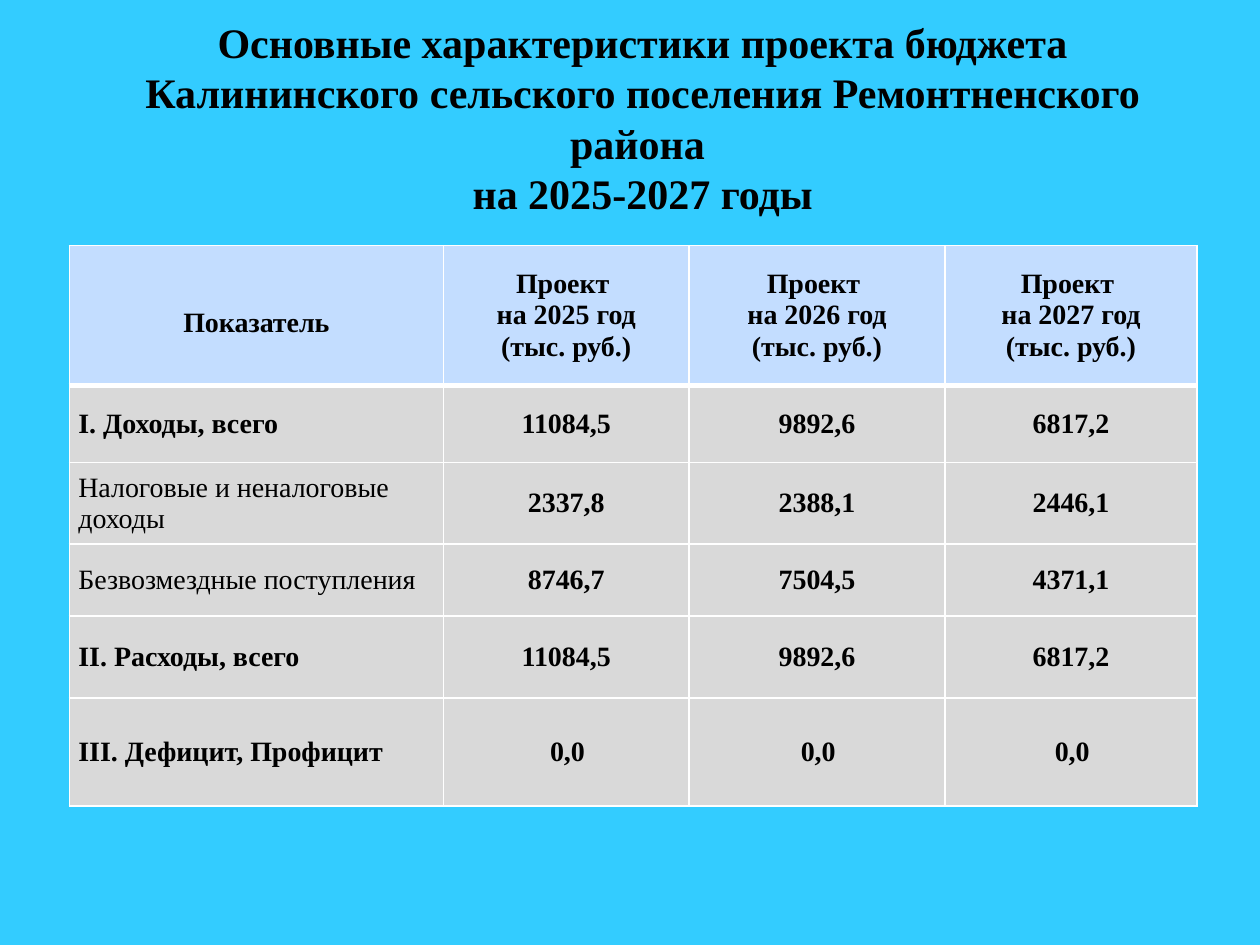
from copy import deepcopy

from lxml import etree
from pptx import Presentation
from pptx.dml.color import RGBColor
from pptx.enum.text import MSO_ANCHOR, MSO_AUTO_SIZE, PP_ALIGN
from pptx.oxml.ns import qn
from pptx.util import Cm, Pt

CENTER, LEFT = PP_ALIGN.CENTER, PP_ALIGN.LEFT
MIDDLE = MSO_ANCHOR.MIDDLE
NO_AUTOFIT = MSO_AUTO_SIZE.NONE

SKY = RGBColor(0x33, 0xCC, 0xFF)
HEADER_BLUE = RGBColor(0xC3, 0xDD, 0xFF)
BODY_GRAY = RGBColor(0xD9, 0xD9, 0xD9)
WHITE = RGBColor(0xFF, 0xFF, 0xFF)
BLACK = RGBColor(0, 0, 0)
FONT = "Times New Roman"

TITLE = ("Основные характеристики проекта бюджета Калининского сельского "
         "поселения Ремонтненского района \vна 2025-2027 годы")
YEARS = (2025, 2026, 2027)
ROWS = [
    ("I. Доходы, всего", "11084,5", "9892,6", "6817,2"),
    ("Налоговые и неналоговые доходы", "2337,8", "2388,1", "2446,1"),
    ("Безвозмездные поступления", "8746,7", "7504,5", "4371,1"),
    ("II. Расходы, всего", "11084,5", "9892,6", "6817,2"),
    ("III. Дефицит, Профицит", "0,0", "0,0", "0,0"),
]
DETAIL_ROWS = (2, 3)
COL_WIDTHS = (7.54, 4.95, 5.16, 5.08)
ROW_HEIGHTS = (2.82, 1.55, 1.65, 1.45, 1.65, 2.18)


def write(tf, text, size=16, bold=True, align=LEFT, indent=0, spacing=None):
    """Fill a text frame, one paragraph per line of text."""
    tf.text = text
    tf.word_wrap = True
    for p in tf.paragraphs:
        p.alignment = align
        if spacing:
            p.line_spacing = spacing
        if indent:
            pPr = p._p.get_or_add_pPr()
            pPr.set("marL", "0")
            pPr.set("indent", str(Cm(indent)))
        for r in p.runs:
            r.font.name = FONT
            r.font.size = Pt(size)
            r.font.bold = bold
            r.font.color.rgb = BLACK
        for br in p._p.findall(qn("a:br")):
            br.insert(0, deepcopy(p.runs[0]._r.rPr))


def add_borders(cell, **widths):
    """Draw white cell borders with widths in points, keyed by side."""
    tcPr = cell._tc.get_or_add_tcPr()
    for side in "LRTB":
        ln = etree.SubElement(tcPr, qn(f"a:ln{side}"), w=str(Pt(widths.get(side, 1))))
        fill = etree.SubElement(ln, qn("a:solidFill"))
        etree.SubElement(fill, qn("a:srgbClr"), val=str(WHITE))


def style_cell(cell, color, **widths):
    """Set the margins, anchor, borders and fill of a cell."""
    cell.margin_left = cell.margin_right = Cm(0.18)
    cell.margin_top = cell.margin_bottom = 0
    cell.vertical_anchor = MIDDLE
    add_borders(cell, **widths)
    cell.fill.solid()
    cell.fill.fore_color.rgb = color


def place_title(s, x, y, w, h):
    """Move and format the title placeholder."""
    sp = s.shapes.title
    sp.left, sp.top, sp.width, sp.height = Cm(x), Cm(y), Cm(w), Cm(h)
    tf = sp.text_frame
    tf.vertical_anchor = MIDDLE
    tf.auto_size = NO_AUTOFIT
    write(tf, TITLE, size=24, align=CENTER)


def add_budget_table(s, x, y):
    """Add the budget table with its top left corner at x, y."""
    table = s.shapes.add_table(len(ROW_HEIGHTS), len(COL_WIDTHS), Cm(x), Cm(y),
                               Cm(sum(COL_WIDTHS)), Cm(sum(ROW_HEIGHTS))).table
    table.horz_banding = False
    for col, width in zip(table.columns, COL_WIDTHS):
        col.width = Cm(width)
    for row, height in zip(table.rows, ROW_HEIGHTS):
        row.height = Cm(height)

    heads = ["Показатель"] + [f"Проект \nна {year} год\n(тыс. руб.)" for year in YEARS]
    for j, head in enumerate(heads):
        cell = table.cell(0, j)
        style_cell(cell, HEADER_BLUE, B=3)
        first = j == 0
        write(cell.text_frame, head, align=CENTER,
              indent=-0.18 if first else 0, spacing=1.5 if first else None)

    for i, values in enumerate(ROWS, 1):
        value_indent = 0.05 if i == len(ROWS) else -0.18
        for j, value in enumerate(values):
            cell = table.cell(i, j)
            style_cell(cell, BODY_GRAY, T=3 if i == 1 else 1)
            if j == 0:
                write(cell.text_frame, value, bold=i not in DETAIL_ROWS)
            else:
                write(cell.text_frame, value, align=CENTER, indent=value_indent)


def main():
    """Build and save the budget slide."""
    prs = Presentation()
    prs.slide_width, prs.slide_height = Cm(25.4), Cm(19.05)
    s = prs.slides.add_slide(prs.slide_layouts[5])
    s.background.fill.solid()
    s.background.fill.fore_color.rgb = SKY
    place_title(s, 1.78, 0.76, 22.35, 3.2)
    add_budget_table(s, 1.4, 4.95)
    prs.save("out.pptx")


if __name__ == "__main__":
    main()
